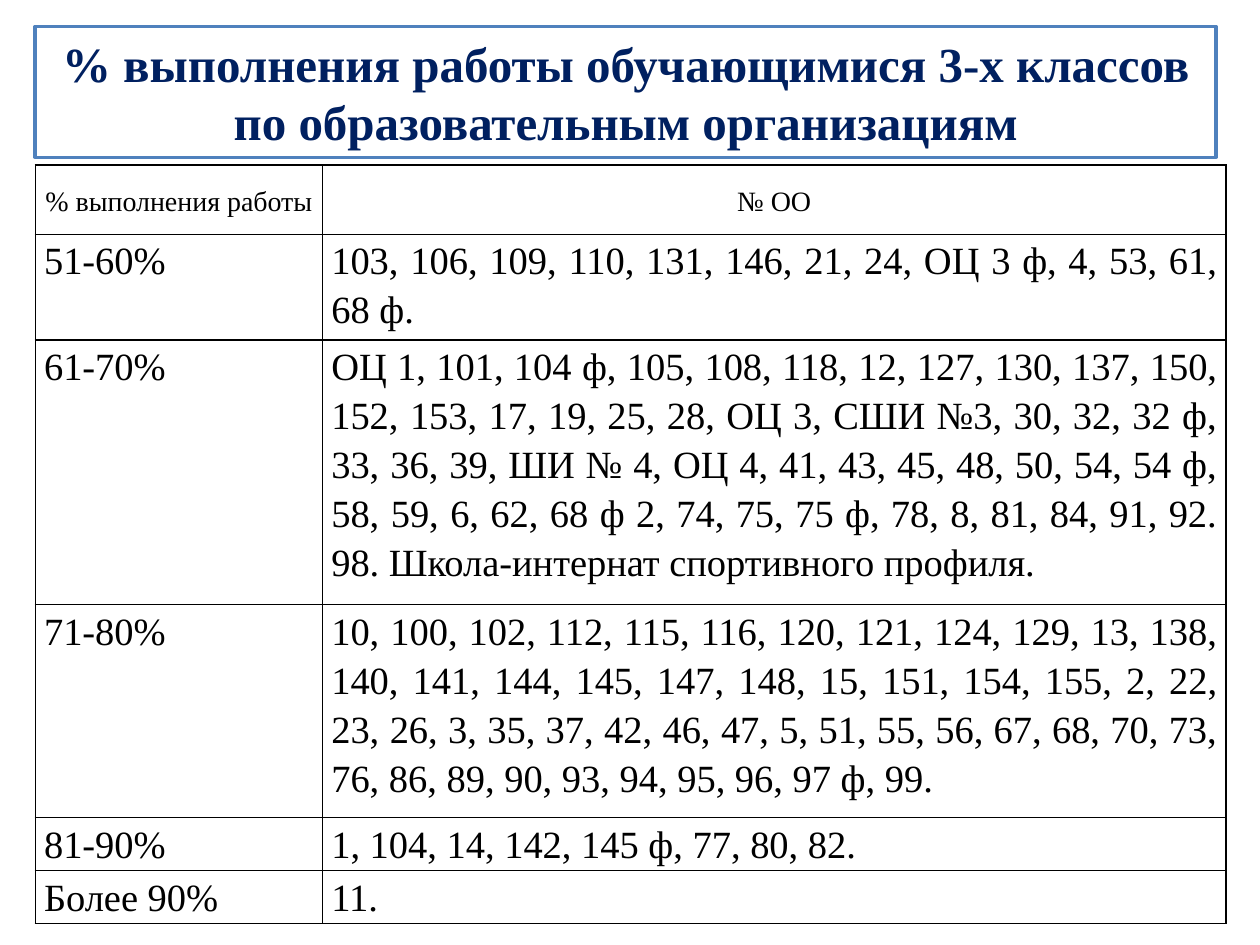
from dataclasses import dataclass

from lxml.etree import SubElement
from pptx import Presentation
from pptx.dml.color import RGBColor
from pptx.enum.shapes import MSO_SHAPE
from pptx.enum.text import MSO_ANCHOR, PP_ALIGN
from pptx.oxml.ns import qn
from pptx.util import Inches, Pt


@dataclass(frozen=True)
class Theme:
    font: str = "Times New Roman"
    title_color: str = "002060"
    frame: str = "4F81BD"
    paper: str = "FFFFFF"
    ink: str = "000000"
    title_size: int = 28
    header_size: int = 16
    body_size: int = 22
    frame_width: int = 2
    grid_width: int = 1


THEME = Theme()

TITLE = "% выполнения работы обучающимися 3-х классов по образовательным организациям"
HEADER = ("% выполнения работы", "№ ОО")
RESULTS = [
    ("51-60%", "103, 106, 109, 110, 131, 146, 21, 24, ОЦ 3 ф, 4, 53, 61, 68 ф."),
    ("61-70%", "ОЦ 1, 101, 104 ф, 105, 108, 118, 12, 127, 130, 137, 150, 152, 153, "
               "17, 19, 25, 28, ОЦ 3, СШИ №3, 30, 32, 32 ф, 33, 36, 39, ШИ № 4, "
               "ОЦ 4, 41, 43, 45, 48, 50, 54, 54 ф, 58, 59, 6, 62, 68 ф 2, 74, 75, "
               "75 ф, 78, 8, 81, 84, 91, 92. 98. Школа-интернат спортивного профиля."),
    ("71-80%", "10, 100, 102, 112, 115, 116, 120, 121, 124, 129, 13, 138, 140, 141, "
               "144, 145, 147, 148, 15, 151, 154, 155, 2, 22, 23, 26, 3, 35, 37, 42, "
               "46, 47, 5, 51, 55, 56, 67, 68, 70, 73, 76, 86, 89, 90, 93, 94, 95, "
               "96, 97 ф, 99."),
    ("81-90%", "1, 104, 14, 142, 145 ф, 77, 80, 82."),
    ("Более 90%", "11."),
]
COLUMN_WIDTHS = (2.28, 7.17)
ROW_HEIGHTS = (0.55, 0.84, 2.1, 1.69, 0.42, 0.42)


def add_run(paragraph, text, size, color, bold=False):
    run = paragraph.add_run()
    run.text = text
    run.font.name = THEME.font
    run.font.size = Pt(size)
    run.font.bold = bold
    run.font.color.rgb = RGBColor.from_string(color)


def add_title(slide):
    title = slide.shapes.add_shape(
        MSO_SHAPE.RECTANGLE, Inches(0.28), Inches(0.21), Inches(9.37), Inches(1.04))
    title.shadow.inherit = False
    title.fill.solid()
    title.fill.fore_color.rgb = RGBColor.from_string(THEME.paper)
    title.line.color.rgb = RGBColor.from_string(THEME.frame)
    title.line.width = Pt(THEME.frame_width)
    title.text_frame.word_wrap = True
    title.text_frame.vertical_anchor = MSO_ANCHOR.MIDDLE
    paragraph = title.text_frame.paragraphs[0]
    paragraph.alignment = PP_ALIGN.CENTER
    add_run(paragraph, TITLE, THEME.title_size, THEME.title_color, bold=True)


def add_borders(cell):
    """Draw all four cell borders, which must precede the fill in the XML."""
    properties = cell._tc.get_or_add_tcPr()
    for position, side in enumerate(("a:lnL", "a:lnR", "a:lnT", "a:lnB")):
        border = SubElement(properties, qn(side), w=str(Pt(THEME.grid_width)))
        SubElement(SubElement(border, qn("a:solidFill")), qn("a:srgbClr"), val=THEME.ink)
        properties.insert(position, border)


def fill_cell(cell, text, is_header):
    cell.fill.background()
    add_borders(cell)
    cell.margin_left = cell.margin_right = Inches(0.07)
    cell.margin_top = cell.margin_bottom = 0
    cell.vertical_anchor = MSO_ANCHOR.MIDDLE if is_header else MSO_ANCHOR.TOP
    paragraph = cell.text_frame.paragraphs[0]
    paragraph.alignment = PP_ALIGN.CENTER if is_header else PP_ALIGN.JUSTIFY
    paragraph.line_spacing = 1.15
    paragraph.space_after = Pt(10)
    add_run(paragraph, text, THEME.header_size if is_header else THEME.body_size, THEME.ink)


def add_results_table(slide):
    rows = [HEADER, *RESULTS]
    results = slide.shapes.add_table(
        len(rows), len(HEADER), Inches(0.28), Inches(1.31),
        Inches(sum(COLUMN_WIDTHS)), Inches(sum(ROW_HEIGHTS))).table
    results.horz_banding = False
    results.first_row = False
    for column, width in zip(results.columns, COLUMN_WIDTHS):
        column.width = Inches(width)
    for row, height, texts in zip(results.rows, ROW_HEIGHTS, rows):
        row.height = Inches(height)
        for cell, text in zip(row.cells, texts):
            fill_cell(cell, text, is_header=texts is HEADER)


def main():
    presentation = Presentation()
    presentation.slide_width = Inches(10)
    presentation.slide_height = Inches(7.5)
    slide = presentation.slides.add_slide(presentation.slide_layouts[6])
    add_title(slide)
    add_results_table(slide)
    presentation.save("out.pptx")


if __name__ == "__main__":
    main()
